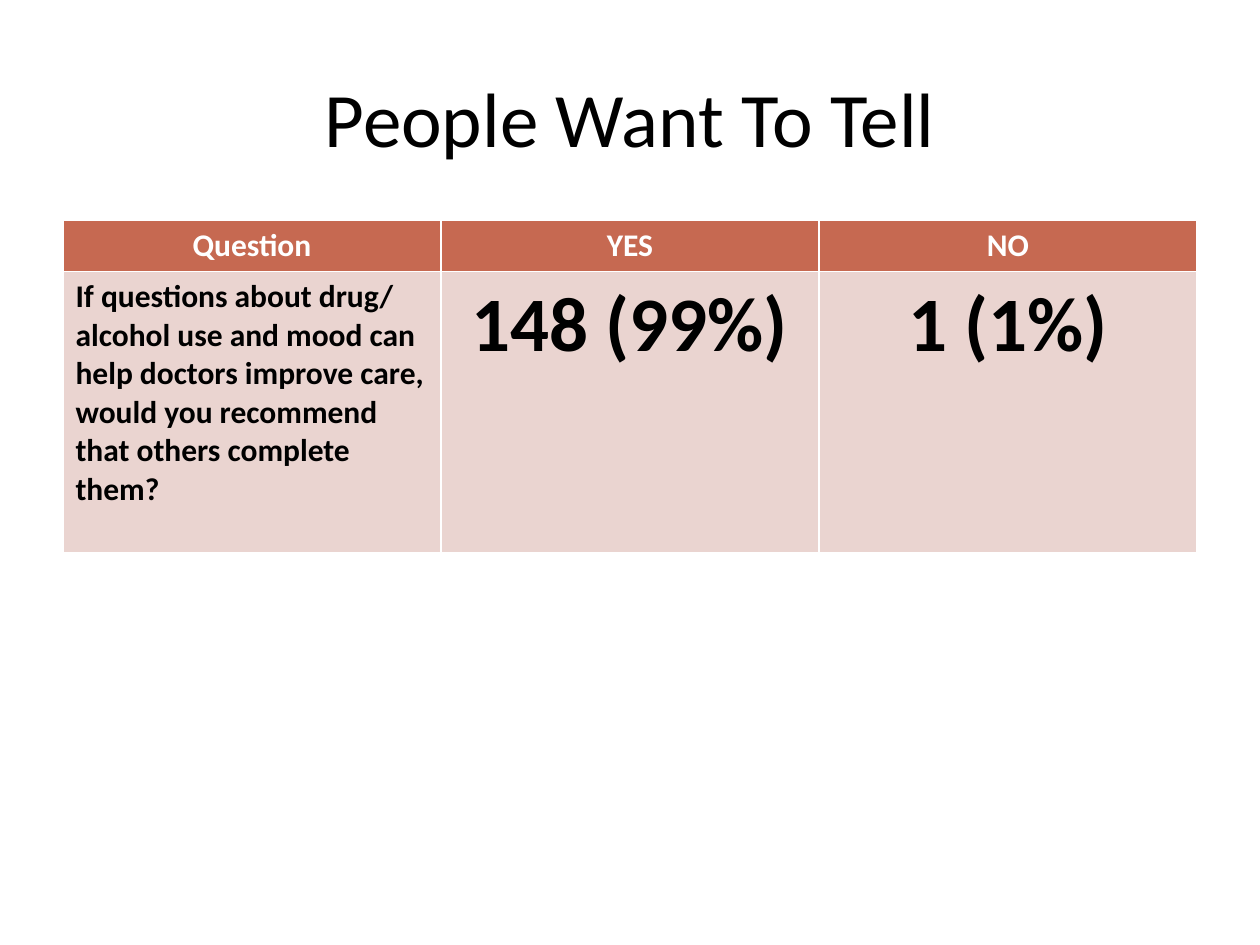
from pptx import Presentation
from pptx import util as u
from pptx.dml.color import RGBColor
from pptx.enum import text


def set_font(font, formats):
    for name, value in formats.items():
        if name == "color":
            font.color.rgb = RGBColor.from_string(value)
        else:
            setattr(font, name, value)


deck = Presentation()
deck.slide_width, deck.slide_height = u.Inches(10), u.Inches(7.5)
page = deck.slides.add_slide(deck.slide_layouts[5])
margin = deck.slide_width // 20
content_width = deck.slide_width - 2 * margin

# Title
title = page.shapes.title
title.left, title.top = margin, int(deck.slide_height * 0.04)
title.width, title.height = content_width, u.Inches(1.25)
title.text_frame.text = "People Want To Tell"
title.text_frame.vertical_anchor = text.MSO_ANCHOR.MIDDLE
para = title.text_frame.paragraphs[0]
para.alignment = text.PP_ALIGN.CENTER
set_font(para.runs[0].font, {"name": "Calibri", "size": u.Pt(44), "color": "000000"})

# Survey answers; the default table style draws the white borders
rows = [
    ["Question", "YES", "NO"],
    ["If questions about drug/ alcohol use and mood can help doctors improve care, "
     "would you recommend that others complete them?", "148 (99%)", "1 (1%)"],
]
row_heights = [0.4, 2.23]
row_colors = [("C66951", "FFFFFF"), ("EAD4D0", "000000")]
table = page.shapes.add_table(2, 3, margin, u.Inches(1.75), content_width,
                              u.Inches(sum(row_heights))).table
for r, (labels, height, (fill, ink)) in enumerate(zip(rows, row_heights, row_colors)):
    table.rows[r].height = u.Inches(height)
    for c, label in enumerate(labels):
        is_answer = r > 0 and c > 0
        is_question = r > 0 and c == 0
        cell = table.cell(r, c)
        cell.fill.solid()
        cell.fill.fore_color.rgb = RGBColor.from_string(fill)
        cell.text = label
        para = cell.text_frame.paragraphs[0]
        para.alignment = text.PP_ALIGN.LEFT if is_question else text.PP_ALIGN.CENTER
        set_font(para.runs[0].font, {"name": "Calibri", "bold": True, "color": ink,
                                     "size": u.Pt(44 if is_answer else 18)})

deck.save("out.pptx")
